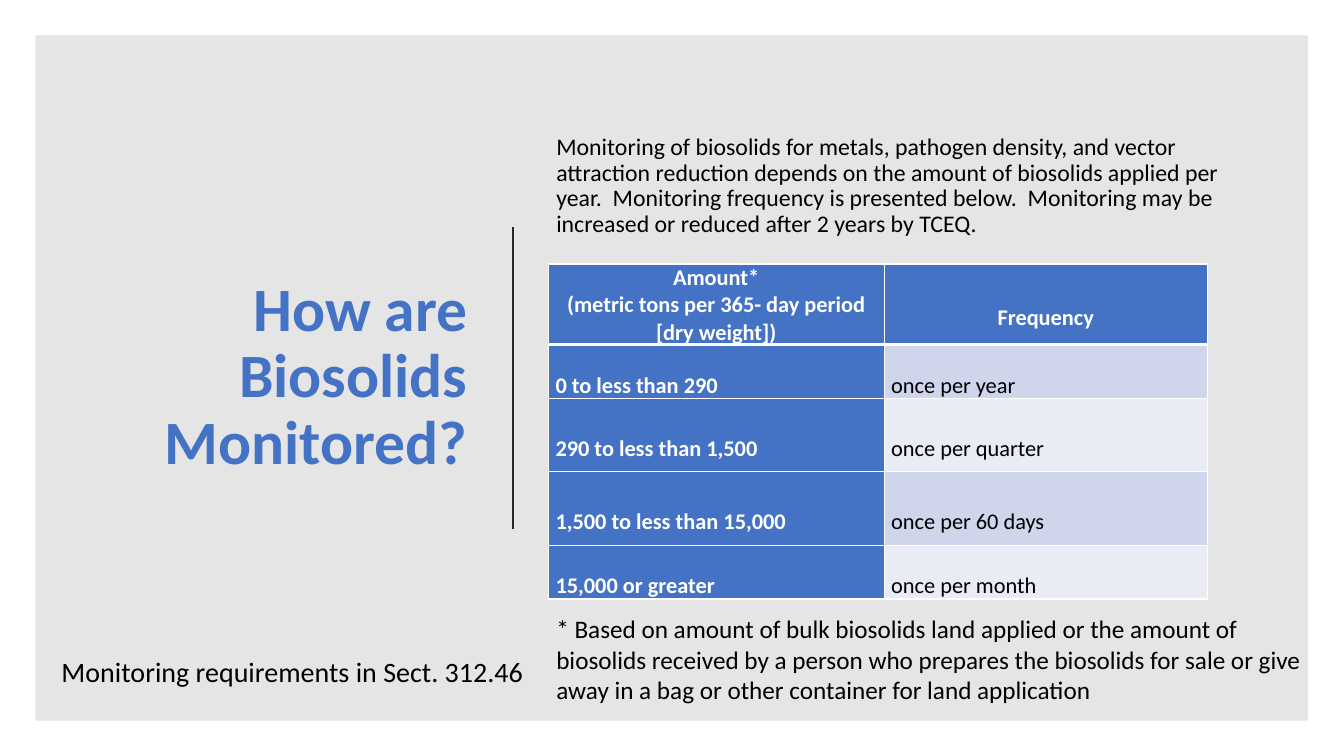
"""Build the slide on how often biosolids are monitored."""
from lxml import etree
from pptx import Presentation
from pptx import util as u
from pptx.dml.color import RGBColor
from pptx.enum import shapes, text
from pptx.oxml.ns import qn

BLUE, WHITE, BLACK = "4472C4", "FFFFFF", "000000"
BANDS = ("CFD5EA", "E9EBF5")
TEXTS = [
    {"box": (2.34, 2.67, 9.7, 13.69), "anchor": text.MSO_ANCHOR.MIDDLE,
     "words": "How are Biosolids Monitored?",
     "font": {"size": u.Pt(44), "bold": True}, "color": BLUE,
     "paragraph": {"alignment": text.PP_ALIGN.RIGHT, "line_spacing": 0.9, "space_after": u.Pt(6)}},
    {"box": (13.77, 2.36, 17.37, 3.76), "anchor": text.MSO_ANCHOR.BOTTOM,
     "words": "Monitoring of biosolids for metals, pathogen density, and vector attraction "
              "reduction depends on the amount of biosolids applied per year.  Monitoring "
              "frequency is presented below.  Monitoring may be increased or reduced after "
              "2 years by TCEQ.",
     "font": {"size": u.Pt(17)}, "color": BLACK,
     "paragraph": {"line_spacing": 0.9, "space_before": u.Pt(10)}},
    {"box": (1.3, 16.46, 12.45, 1.24), "anchor": text.MSO_ANCHOR.TOP,
     "words": "Monitoring requirements in Sect. 312.46",
     "font": {"size": u.Pt(20)}, "color": BLACK,
     "paragraph": {"line_spacing": 0.9, "space_after": u.Pt(6)}},
    {"box": (13.77, 15.34, 19.63, 2.6), "anchor": text.MSO_ANCHOR.TOP,
     "words": "* Based on amount of bulk biosolids land applied or the amount of biosolids "
              "received by a person who prepares the biosolids for sale or give away in a bag "
              "or other container for land application",
     "font": {"size": u.Pt(18)}, "color": BLACK, "paragraph": {}},
]
ROWS = [
    (("Amount*", "(metric tons per 365- day period [dry weight])"), ("Frequency",)),
    (("0 to less than 290",), ("once per year",)),
    (("290 to less than 1,500",), ("once per quarter",)),
    (("1,500 to less than 15,000",), ("once per 60 days",)),
    (("15,000 or greater",), ("once per month",)),
]
TABLE_CORNER = (13.82, 6.65)
COLUMN_WIDTHS = (8.46, 8.15)
ROW_HEIGHTS = (2.01, 1.35, 1.85, 1.85, 1.27)
CELL_FORMAT = {"margin_left": u.Cm(0.18), "margin_right": u.Cm(0.18), "margin_top": 0,
               "margin_bottom": 0, "vertical_anchor": text.MSO_ANCHOR.MIDDLE}


def apply(target, values):
    for name, value in values.items():
        setattr(target, name, value)


def paint(color_format, color):
    color_format.rgb = RGBColor.from_string(color)


def fill(target, color):
    target.fill.solid()
    paint(target.fill.fore_color, color)


def write(paragraph, words, color, font, layout):
    apply(paragraph, layout)
    run = paragraph.add_run()
    run.text = words
    apply(run.font, {"name": "Calibri", **font})
    paint(run.font.color, color)


def add_text(slide, item):
    frame = slide.shapes.add_textbox(*map(u.Cm, item["box"])).text_frame
    apply(frame, {"word_wrap": True, "vertical_anchor": item["anchor"]})
    write(frame.paragraphs[0], item["words"], item["color"], item["font"], item["paragraph"])


def add_borders(cell, widths):
    properties = cell._tc.get_or_add_tcPr()
    for position, (side, width) in enumerate(widths.items()):
        line = etree.Element(qn("a:" + side), w=str(u.Pt(width)))
        solid = etree.SubElement(line, qn("a:solidFill"))
        etree.SubElement(solid, qn("a:srgbClr"), val=WHITE)
        properties.insert(position, line)


def add_backdrop(slide):
    panel = slide.shapes.add_shape(shapes.MSO_SHAPE.RECTANGLE, *map(u.Cm, (0.89, 0.89, 32.08, 17.27)))
    panel.shadow.inherit = False
    fill(panel, BLACK)
    panel.line.fill.background()
    color = panel.fill._xPr.find(qn("a:solidFill"))[0]
    etree.SubElement(color, qn("a:alpha"), val="10000")


def add_divider(slide):
    divider = slide.shapes.add_connector(
        shapes.MSO_CONNECTOR.STRAIGHT, *map(u.Cm, (12.93, 5.72, 12.93, 13.34)))
    divider.line.width = u.Pt(1.5)
    paint(divider.line.color, "262626")
    etree.SubElement(divider._element.spPr, qn("a:effectLst"))


def add_frequency_table(slide):
    size = (sum(COLUMN_WIDTHS), sum(ROW_HEIGHTS))
    table = slide.shapes.add_table(
        len(ROWS), len(COLUMN_WIDTHS), *map(u.Cm, TABLE_CORNER + size)).table
    for column, width in zip(table.columns, COLUMN_WIDTHS):
        column.width = u.Cm(width)
    for row, height in zip(table.rows, ROW_HEIGHTS):
        row.height = u.Cm(height)
    for r, row in enumerate(ROWS):
        for c, lines in enumerate(row):
            cell = table.cell(r, c)
            strong = r == 0 or c == 0
            apply(cell, CELL_FORMAT)
            fill(cell, BLUE if strong else BANDS[(r - 1) % 2])
            add_borders(cell, {"lnL": 1, "lnR": 1, "lnT": 3 if r == 1 else 1, "lnB": 3 if r == 0 else 1})
            layout = {"alignment": text.PP_ALIGN.CENTER if r == 0 else text.PP_ALIGN.LEFT,
                      "line_spacing": 2.0 if len(lines) == 1 else 1.0}
            for i, words in enumerate(lines):
                paragraph = cell.text_frame.add_paragraph() if i else cell.text_frame.paragraphs[0]
                write(paragraph, words, WHITE if strong else BLACK,
                      {"size": u.Pt(16), "bold": strong}, layout)


def main():
    presentation = Presentation()
    apply(presentation, {"slide_width": u.Cm(33.87), "slide_height": u.Cm(19.05)})
    slide = presentation.slides.add_slide(presentation.slide_layouts[6])
    add_backdrop(slide)
    add_divider(slide)
    for item in TEXTS:
        add_text(slide, item)
    add_frequency_table(slide)
    presentation.save("out.pptx")


if __name__ == "__main__":
    main()
